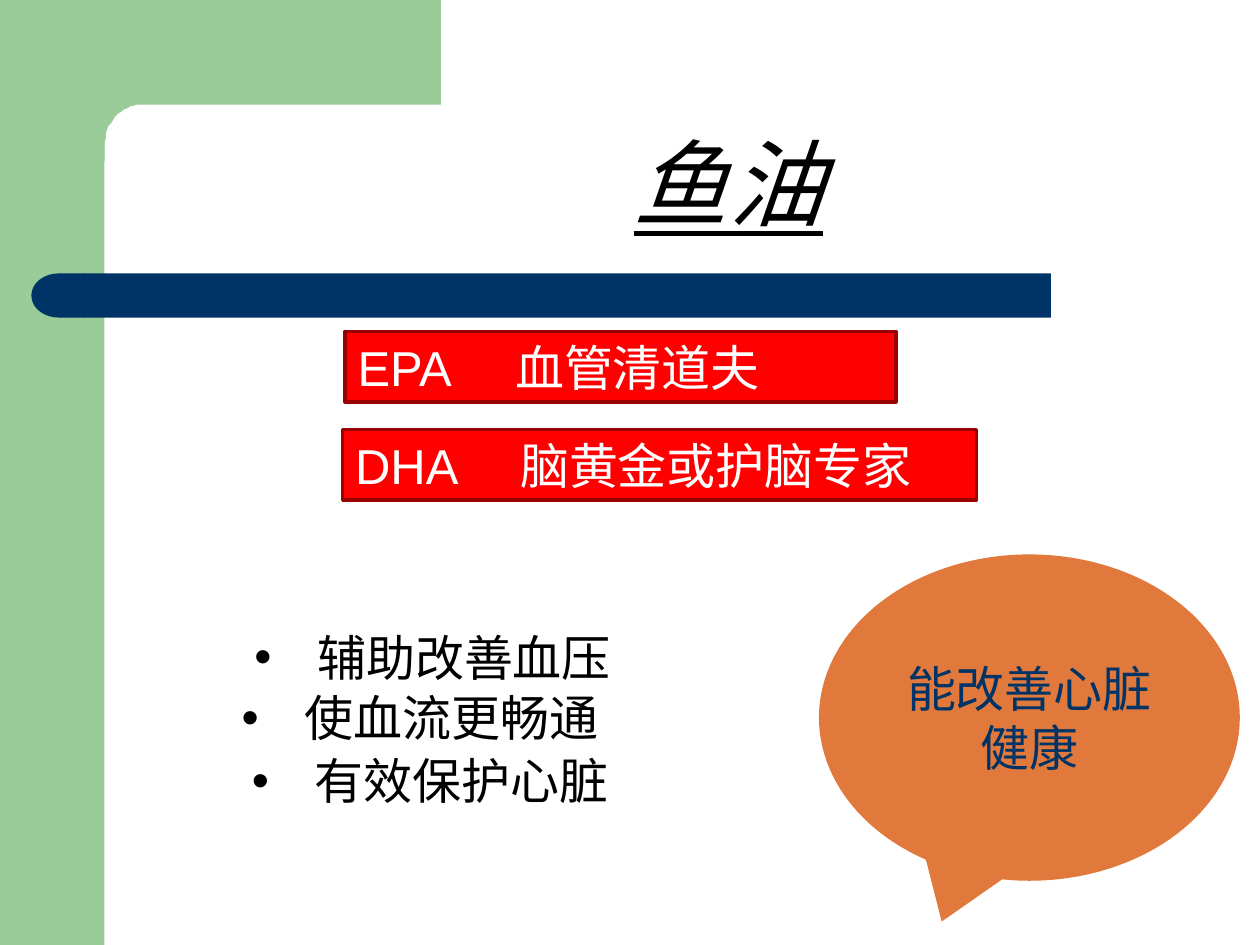
"""Builds a slide on the benefits of fish oil."""
from dataclasses import dataclass, field
from math import cos, pi, sin
from typing import Optional

from lxml.etree import SubElement
from pptx import Presentation
from pptx.dml.color import RGBColor
from pptx.enum.shapes import MSO_SHAPE
from pptx.enum.text import MSO_ANCHOR, MSO_AUTO_SIZE, PP_ALIGN
from pptx.oxml.ns import qn
from pptx.util import Pt

PX = 9144
GREEN = RGBColor(0x99, 0xCC, 0x99)
NAVY = RGBColor(0x00, 0x33, 0x66)
RED = RGBColor(0xFF, 0x00, 0x00)
DARK_RED = RGBColor(0x99, 0x00, 0x00)
ORANGE = RGBColor(0xE1, 0x79, 0x3C)
WHITE = RGBColor(0xFF, 0xFF, 0xFF)
BLACK = RGBColor(0x00, 0x00, 0x00)
BODY_FONT = {"name": "Arial", "size": Pt(28)}
TITLE_FONT = {"name": "Arial", "size": Pt(54), "italic": True, "underline": True}


@dataclass(frozen=True)
class Box:
    left: int
    top: int
    width: int
    height: int

    def emu(self) -> tuple:
        return tuple(n * PX for n in (self.left, self.top, self.width, self.height))


@dataclass(frozen=True)
class Label:
    text: str
    box: Box
    color: RGBColor = BLACK
    font: dict = field(default_factory=lambda: BODY_FONT)
    tab: Optional[int] = None
    bullet: bool = False


def paint(shape, fill: RGBColor, line: Optional[RGBColor] = None) -> None:
    shape.shadow.inherit = False
    shape.fill.solid()
    shape.fill.fore_color.rgb = fill
    if line is None:
        shape.line.fill.background()
    else:
        shape.line.color.rgb = line
        shape.line.width = Pt(2)


def add_panel(slide, kind: MSO_SHAPE, box: Box, fill: RGBColor,
              line: Optional[RGBColor] = None):
    shape = slide.shapes.add_shape(kind, *box.emu())
    paint(shape, fill, line)
    return shape


def add_corner(slide) -> None:
    """Draws the top green band with its rounded inner corner."""
    steps = 16
    angles = [pi / 2 * step / steps for step in range(steps + 1)]
    arc = [(112 - 29 * sin(a), 116 - 33 * cos(a)) for a in angles]
    outline = [(350, 83), *arc, (83, 128), (50, 128), (50, 0)]
    builder = slide.shapes.build_freeform(350, 0, scale=PX)
    builder.add_line_segments(outline, close=True)
    paint(builder.convert_to_shape(), GREEN)


def write(shape, label: Label, align: PP_ALIGN = PP_ALIGN.LEFT,
          anchor: MSO_ANCHOR = MSO_ANCHOR.TOP, grow: bool = True) -> None:
    frame = shape.text_frame
    frame.word_wrap = True
    frame.vertical_anchor = anchor
    frame.auto_size = MSO_AUTO_SIZE.SHAPE_TO_FIT_TEXT if grow else MSO_AUTO_SIZE.NONE
    paragraph = frame.paragraphs[0]
    paragraph.alignment = align
    run = paragraph.add_run()
    run.text = label.text
    run.font.color.rgb = label.color
    for name, value in label.font.items():
        setattr(run.font, name, value)
    properties = paragraph._p.get_or_add_pPr()
    if label.bullet:
        properties.set("marL", str(50 * PX))
        properties.set("indent", str(-50 * PX))
        SubElement(properties, qn("a:buFont"), typeface="Arial")
        SubElement(properties, qn("a:buChar"), char="•")
    if label.tab:
        stops = SubElement(properties, qn("a:tabLst"))
        SubElement(stops, qn("a:tab"), pos=str(label.tab * PX), algn="l")


def add_text(slide, label: Label) -> None:
    write(slide.shapes.add_textbox(*label.box.emu()), label)


def add_banner(slide, label: Label) -> None:
    shape = add_panel(slide, MSO_SHAPE.RECTANGLE, label.box, RED, DARK_RED)
    write(shape, label)


def add_frame(slide) -> None:
    add_panel(slide, MSO_SHAPE.RECTANGLE, Box(0, 0, 83, 750), GREEN)
    add_corner(slide)
    bar = add_panel(slide, MSO_SHAPE.ROUNDED_RECTANGLE, Box(67, 217, 767, 35), NAVY)
    bar.adjustments[0] = 0
    cap = add_panel(slide, MSO_SHAPE.FLOWCHART_DELAY, Box(25, 217, 43, 35), NAVY)
    cap.element.spPr.find(qn("a:xfrm")).set("flipH", "1")


TITLE = Label("鱼油\t", Box(493, 94, 437, 98), font=TITLE_FONT, tab=251)
BANNERS = (
    Label("DHA\t脑黄金或护脑专家", Box(272, 341, 503, 56), WHITE, tab=131),
    Label("EPA\t血管清道夫", Box(274, 263, 437, 56), WHITE, tab=125),
)
BENEFITS = (
    Label("辅助改善血压", Box(192, 493, 437, 56), bullet=True),
    Label("使血流更畅通", Box(182, 541, 437, 56), bullet=True),
    Label("有效保护心脏", Box(190, 591, 551, 56), bullet=True),
)
CALLOUT = Label("能改善心脏健康", Box(650, 440, 334, 259), NAVY)


def main() -> None:
    presentation = Presentation()
    presentation.slide_width = 1000 * PX
    presentation.slide_height = 750 * PX
    slide = presentation.slides.add_slide(presentation.slide_layouts[6])
    add_frame(slide)
    for banner in BANNERS:
        add_banner(slide, banner)
    for label in (TITLE, *BENEFITS):
        add_text(slide, label)
    callout = add_panel(slide, MSO_SHAPE.OVAL_CALLOUT, CALLOUT.box, ORANGE)
    write(callout, CALLOUT, PP_ALIGN.CENTER, MSO_ANCHOR.MIDDLE, grow=False)
    presentation.save("out.pptx")


if __name__ == "__main__":
    main()
